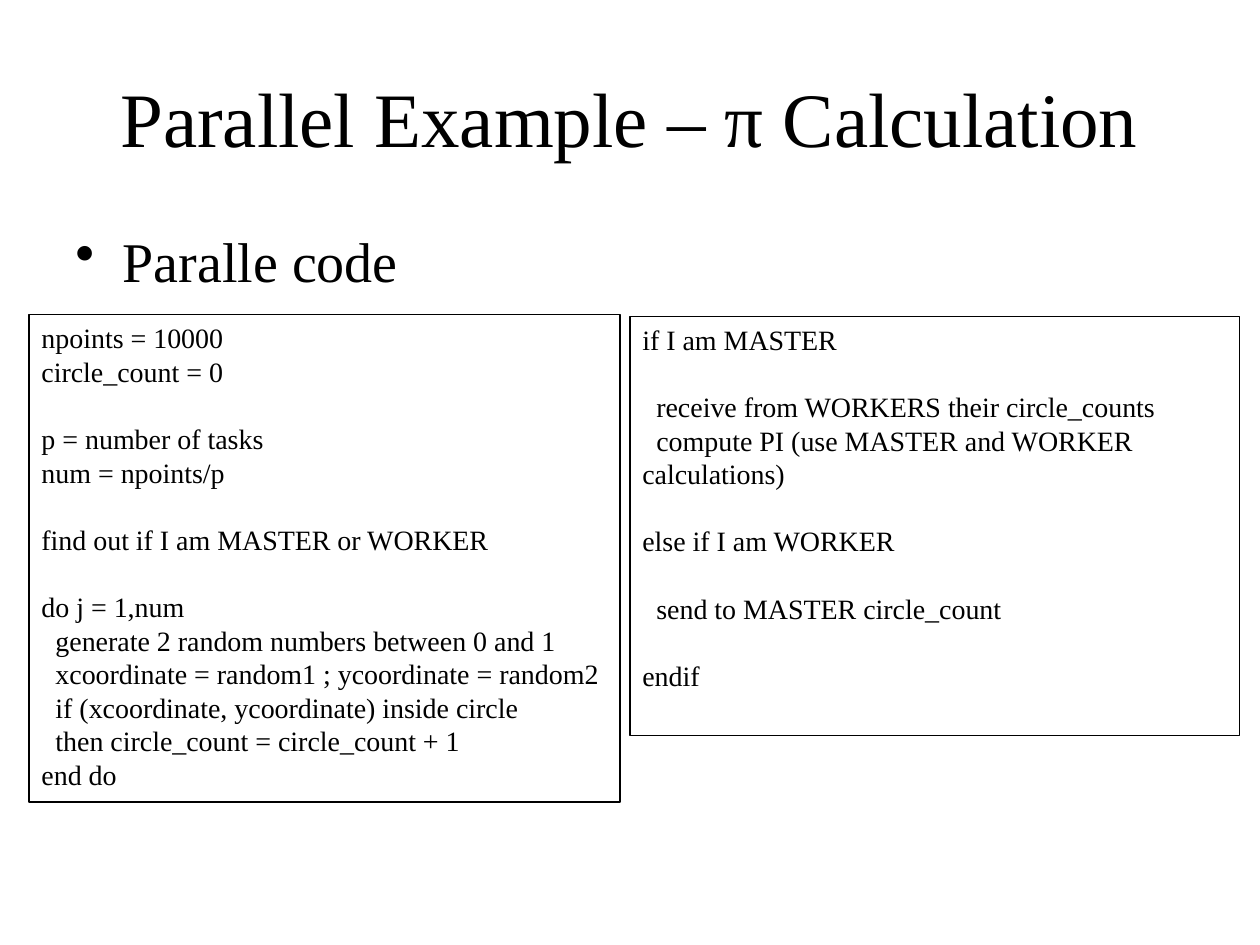
from pptx import Presentation
from pptx.dml.color import RGBColor
from pptx.enum import shapes, text
from pptx.oxml import parse_xml
from pptx.oxml.ns import nsdecls
from pptx.util import Pt

COLORS = {"ink": "000000", "paper": "FFFFFF"}
FONT = "Times New Roman"
LINE = 19.2
STEP = 8

# Each block is a list of stanzas; each line is (indent level, text).
SETUP = [
    [(0, "npoints = 10000"), (0, "circle_count = 0")],
    [(0, "p = number of tasks"), (0, "num = npoints/p")],
    [(0, "find out if I am MASTER or WORKER")],
    [(0, "do j = 1,num"),
     (1, "generate 2 random numbers between 0 and 1"),
     (1, "xcoordinate = random1 ; ycoordinate = random2"),
     (1, "if (xcoordinate, ycoordinate) inside circle"),
     (1, "then circle_count = circle_count + 1"),
     (0, "end do")],
]
ROLES = [
    [(0, "if I am MASTER")],
    [(1, "receive from WORKERS their circle_counts"),
     (1, "compute PI (use MASTER and WORKER calculations)")],
    [(0, "else if I am WORKER")],
    [(1, "send to MASTER circle_count")],
    [(0, "endif")],
]


def color(name):
    return RGBColor.from_string(COLORS[name])


def style(par, size):
    for run in par.runs:
        run.font.name = FONT
        run.font.size = Pt(size)
        run.font.color.rgb = color("ink")


def add_text(slide, box, words, size):
    """Add a one-paragraph text box and return its frame."""
    frame = slide.shapes.add_textbox(*map(Pt, box)).text_frame
    frame.word_wrap = True
    frame.text = words
    style(frame.paragraphs[0], size)
    return frame


def add_title(slide, box, words):
    frame = add_text(slide, box, words, 44)
    frame.vertical_anchor = text.MSO_ANCHOR.MIDDLE
    frame.paragraphs[0].alignment = text.PP_ALIGN.CENTER


def add_bullet(slide, box, words):
    par = add_text(slide, box, words, 32).paragraphs[0]
    par.space_before = Pt(6.4)
    props = par._p.get_or_add_pPr()
    props.set("marL", str(Pt(27)))
    props.set("indent", str(-Pt(27)))
    props.append(parse_xml(f'<a:buChar {nsdecls("a")} char="•"/>'))


def add_code(slide, box, block):
    """Add a framed listing with one line of space between stanzas."""
    shape = slide.shapes.add_shape(
        shapes.MSO_SHAPE.RECTANGLE, *map(Pt, box))
    shape.shadow.inherit = False
    shape.fill.background()
    shape.line.color.rgb = color("ink")
    shape.line.width = Pt(0.75)
    frame = shape.text_frame
    frame.word_wrap = True
    frame.vertical_anchor = text.MSO_ANCHOR.TOP
    lines = [(level, words, i > 0 and j == 0)
             for i, stanza in enumerate(block)
             for j, (level, words) in enumerate(stanza)]
    frame.text = "\n".join(words for _, words, _ in lines)
    for par, (level, _, gap) in zip(frame.paragraphs, lines):
        par.alignment = text.PP_ALIGN.LEFT
        par.line_spacing = Pt(LINE)
        par.space_before = Pt(LINE if gap else 0)
        props = par._p.get_or_add_pPr()
        props.set("marL", "0")
        props.set("indent", str(Pt(STEP * level)))
        style(par, 16)


def main():
    deck = Presentation()
    deck.slide_width, deck.slide_height = Pt(720), Pt(540)
    slide = deck.slides.add_slide(deck.slide_layouts[6])
    slide.background.fill.solid()
    slide.background.fill.fore_color.rgb = color("paper")
    add_title(slide, (36, 21.6, 648, 90), "Parallel Example – π Calculation")
    add_bullet(slide, (36, 126, 648, 356.4), "Paralle code")
    add_code(slide, (16.6, 179.8, 337.7, 278.6), SETUP)
    add_code(slide, (360, 180.7, 348.5, 239.8), ROLES)
    deck.save("out.pptx")


if __name__ == "__main__":
    main()
